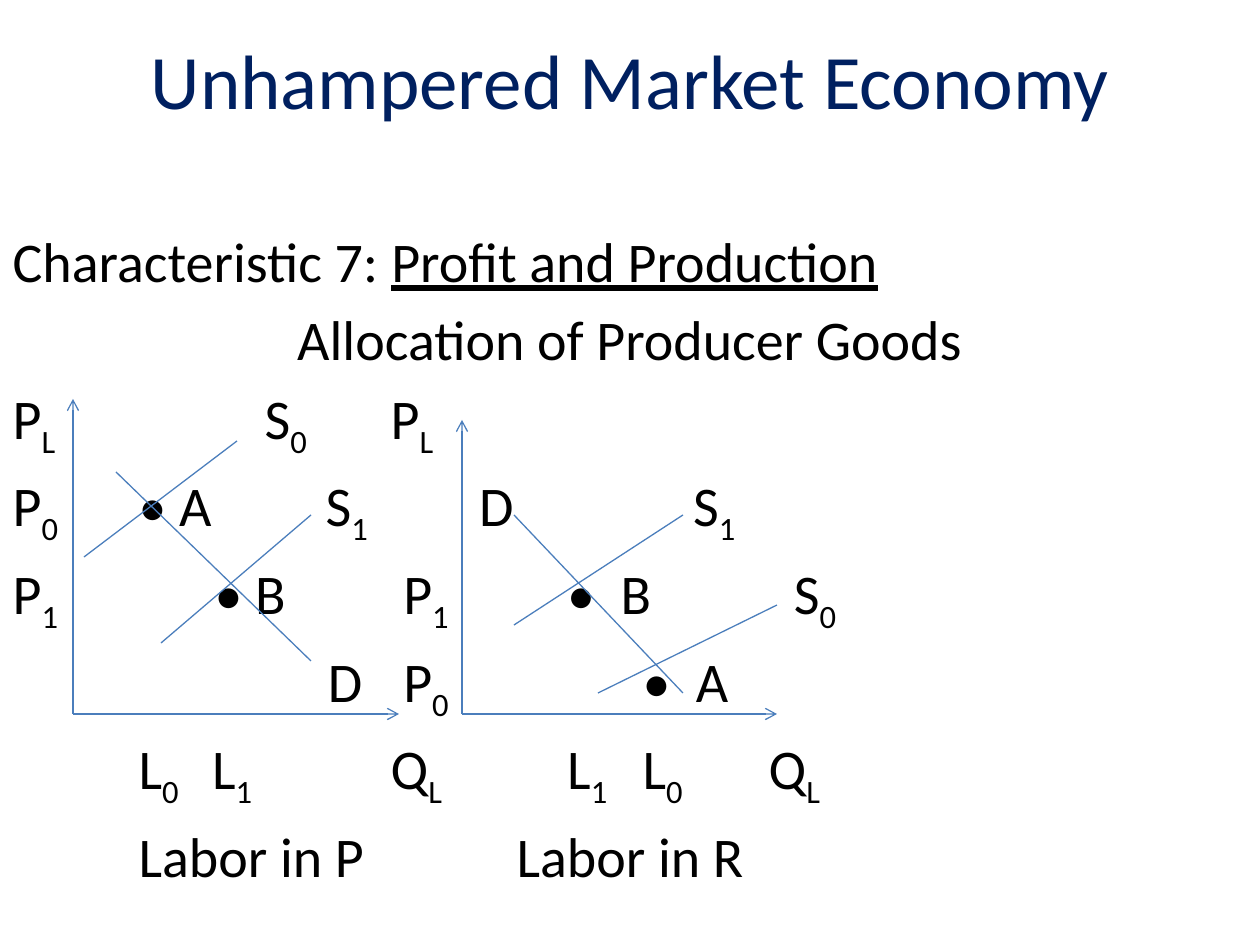
"""Build the slide on labor moving between two markets."""
from dataclasses import dataclass

from lxml import etree
from pptx import Presentation
from pptx.dml.color import RGBColor
from pptx.enum.shapes import MSO_CONNECTOR
from pptx.enum.text import MSO_ANCHOR, MSO_AUTO_SIZE, PP_ALIGN
from pptx.oxml.ns import qn
from pptx.util import Emu, Pt

LINE = MSO_CONNECTOR.STRAIGHT
MIDDLE, TOP = MSO_ANCHOR.MIDDLE, MSO_ANCHOR.TOP
FIXED = MSO_AUTO_SIZE.NONE
LEFT, CENTER = PP_ALIGN.LEFT, PP_ALIGN.CENTER
SCALE = 914400 / 126


@dataclass(frozen=True)
class Theme:
    """Hold the colours and type sizes."""
    font: str = "Calibri"
    head: RGBColor = RGBColor(0x00, 0x20, 0x60)
    ink: RGBColor = RGBColor(0x00, 0x00, 0x00)
    line: RGBColor = RGBColor(0x4B, 0x7E, 0xBC)
    big: float = 44
    size: float = 32
    gap: float = 6.4
    space: float = 7.23
    width: float = 0.75
    tab: int = 126


THEME = Theme()

ROWS = [
    ("P_L\t\tS_0\tP_L",),
    ("P_0\t• A", 9, "S_1\t", 7, "D\t\t", 4, "S_1"),
    ("P_1\t", 6, "• B\t P_1\t", 4, "•", 2, "B\t", 2, "S_0"),
    ("\t\t", 5, "D\t P_0\t\t•", 2, "A"),
    ("\tL_0", 2.65, "L_1\t\tQ_L\t", 4, "L_1\tL_0\tQ_L"),
    ("\tLabor in P\t\tLabor in R",),
]
AXES = [
    (73, 714, 73, 399),
    (73, 714, 399, 714),
    (462, 714, 462, 420),
    (462, 714, 777, 714),
]
CURVES = [
    (116, 472, 311, 661),
    (84, 557, 237, 441),
    (161, 643, 311, 515),
    (514, 515, 683, 693),
    (683, 515, 514, 625),
    (777, 605, 598, 693),
]


def px(num):
    """Turn px into EMU."""
    return Emu(round(num * SCALE))


def place(shape, box, anchor):
    """Move a placeholder and fix its frame."""
    shape.left, shape.top, shape.width, shape.height = map(px, box)
    frame = shape.text_frame
    frame.word_wrap = True
    frame.auto_size = FIXED
    frame.vertical_anchor = anchor
    return frame


def style(run, size, color):
    """Set the type of a run."""
    run.font.name = THEME.font
    run.font.size = Pt(size)
    run.font.color.rgb = color


def add_run(para, text, **extra):
    """Add one run of body text with extra run attributes."""
    run = para.add_run()
    run.text = text
    style(run, THEME.size, THEME.ink)
    for name, value in extra.items():
        run.font._element.set(name, value)


def add_gap(para, count):
    """Add one space, tracked out to the width of several."""
    add_run(para, " ", spc=str(round((count - 1) * THEME.space * 100)))


def add_label(para, text):
    """Add text, with the letter after each _ lowered."""
    first, *rest = text.split("_")
    add_run(para, first)
    for part in rest:
        add_run(para, part[0], baseline="-25000")
        if part[1:]:
            add_run(para, part[1:])


def set_para(para, align=LEFT):
    """Set spacing, alignment and tab width without a bullet."""
    para.alignment = align
    para.space_before = Pt(THEME.gap)
    props = para._p.get_or_add_pPr()
    props.set("marL", "0")
    props.set("indent", "0")
    props.set("defTabSz", str(px(THEME.tab)))
    etree.SubElement(props, qn("a:buNone"))


def add_row(frame, parts):
    """Add a row of labels and the gaps between them."""
    para = frame.add_paragraph()
    set_para(para)
    for part in parts:
        if isinstance(part, str):
            add_label(para, part)
        else:
            add_gap(para, part)


def add_title(slide):
    """Fill the title."""
    frame = place(slide.shapes.title, (0, 0, 1260, 158), MIDDLE)
    frame.text = "Unhampered Market Economy"
    para = frame.paragraphs[0]
    para.alignment = CENTER
    style(para.runs[0], THEME.big, THEME.head)


def add_body(slide):
    """Fill the body with the headings and the graph labels."""
    frame = place(slide.placeholders[1], (0, 220, 1260, 725), TOP)
    para = frame.paragraphs[0]
    set_para(para)
    add_run(para, "Characteristic 7: ")
    add_run(para, "Profit and Production", u="sng")
    para = frame.add_paragraph()
    set_para(para, CENTER)
    add_run(para, "Allocation of Producer Goods")
    for parts in ROWS:
        add_row(frame, parts)


def add_line(slide, ends, arrow=False):
    """Draw a line, with an arrowhead for an axis."""
    line = slide.shapes.add_connector(LINE, *map(px, ends))
    line.line.color.rgb = THEME.line
    line.line.width = Pt(THEME.width)
    if arrow:
        pen = line.line._get_or_add_ln()
        etree.SubElement(pen, qn("a:tailEnd"), type="arrow")
    etree.SubElement(line._element.spPr, qn("a:effectLst"))


def main():
    """Build and save the slide."""
    deck = Presentation()
    deck.slide_width, deck.slide_height = px(1260), px(945)
    slide = deck.slides.add_slide(deck.slide_layouts[1])
    add_title(slide)
    add_body(slide)
    for ends in AXES:
        add_line(slide, ends, arrow=True)
    for ends in CURVES:
        add_line(slide, ends)
    deck.save("out.pptx")


if __name__ == "__main__":
    main()
